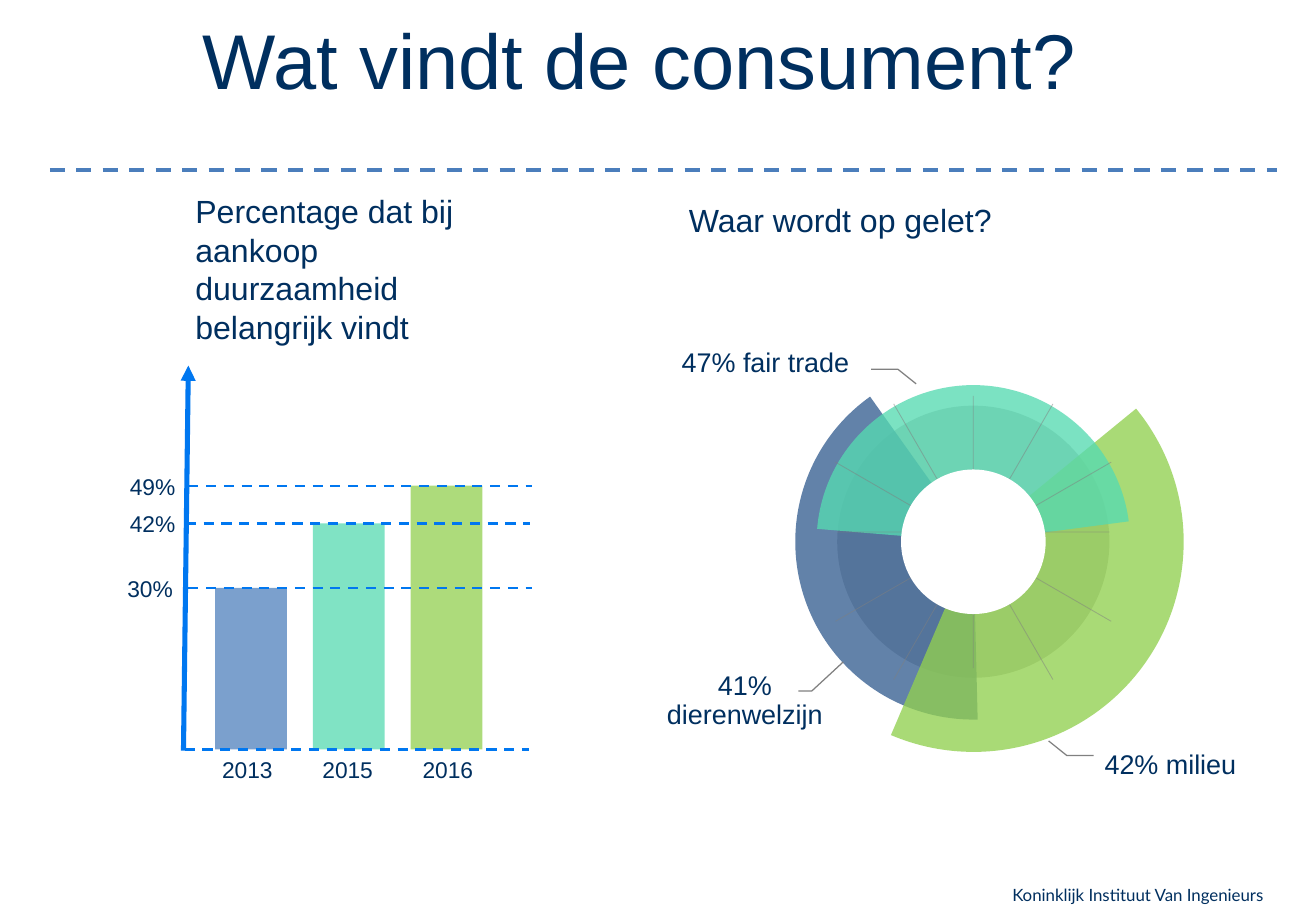
from math import cos, radians, sin

from lxml import etree
from pptx import Presentation
from pptx.dml.color import RGBColor
from pptx.enum.dml import MSO_LINE
from pptx.enum.shapes import MSO_CONNECTOR, MSO_SHAPE
from pptx.enum.text import PP_ALIGN
from pptx.oxml.ns import qn
from pptx.util import Inches, Pt

RECTANGLE, OVAL, PIE = MSO_SHAPE.RECTANGLE, MSO_SHAPE.OVAL, MSO_SHAPE.CHORD.PIE
STRAIGHT = MSO_CONNECTOR.STRAIGHT
DASH = MSO_LINE.DASH
LEFT, CENTER, RIGHT = PP_ALIGN.LEFT, PP_ALIGN.CENTER, PP_ALIGN.RIGHT

NAVY, AXIS_BLUE, GREY, WHITE = "002F5F", "0077F0", "808080", "FFFFFF"
RULE_BLUE = "4B7EBC"
NORMAL_INSETS, FOOTER_INSETS, NO_INSETS = (0.1, 0.05), (0.04, 0.02), (0, 0)

TITLE = "Wat vindt de consument?"
FOOTER = "Koninklijk Instituut Van Ingenieurs"
HEADINGS = [
    ("Percentage dat bij aankoop duurzaamheid belangrijk vindt", 1.51, 1.53, 1.06),
    ("Waar wordt op gelet?", 5.57, 1.6, 0.42),
]

YEARS = [
    ("2013", 30, "4F81BD", 0.95, 1.55),
    ("2015", 42, "56DAB1", 0.97, 1.53),
    ("2016", 49, "92D050", 0.97, 1.55),
]
BASELINE = 6.17
INCHES_PER_PERCENT = 0.0443
BAR_LEFT, BAR_PITCH, BAR_WIDTH = 1.77, 0.805, 0.59
YEAR_LEFT, YEAR_PITCH = 1.73, 0.825
LABEL_WIDTH, LABEL_HEIGHT = 0.78, 0.33
GUIDE_LENGTH = 2.83

RING_X, RING_Y = 8.01, 4.46
SECTORS = [
    (1.465, "376092", 88.58, 234.58, 0),
    (1.73, "92D050", 170.88, 323.31, 149.8),
    (1.29, "56DAB1", 271.44, 79.2, 273.3),
]
SPOKES = [(0, 1.12, 4.38), (90, 1.12, 4.38)] + [
    (angle, 1.31, RING_Y) for angle in (30, 60, 120, 150)
]
THEMES = [
    (["41%", "dierenwelzijn"], (5.48, 5.54, 1.3, 0.48), CENTER,
     [(6.94, 5.45), (6.68, 5.69), (6.57, 5.69)]),
    (["47% fair trade"], (5.46, 2.88, 1.53, 0.24), RIGHT,
     [(7.54, 3.16), (7.39, 3.04), (7.17, 3.04)]),
    (["42% milieu"], (9.09, 6.19, 1.43, 0.24), LEFT,
     [(8.63, 6.1), (8.78, 6.22), (9, 6.22)]),
]

deck = Presentation()
deck.slide_width, deck.slide_height = Inches(10.83), Inches(7.5)
shapes = deck.slides.add_slide(deck.slide_layouts[6]).shapes


def paint(color_format, color, opacity=100):
    color_format.rgb = RGBColor.from_string(color)
    if opacity < 100:
        srgb = color_format._xFill.find(qn("a:srgbClr"))
        etree.SubElement(srgb, qn("a:alpha")).set("val", str(opacity * 1000))


def add_text(lines, box, size, align=LEFT, insets=NORMAL_INSETS, spacing=None, font="Arial"):
    frame = shapes.add_textbox(*map(Inches, box)).text_frame
    frame.word_wrap = True
    frame.margin_left = frame.margin_right = Inches(insets[0])
    frame.margin_top = frame.margin_bottom = Inches(insets[1])
    frame.text = "\n".join(lines)
    for paragraph in frame.paragraphs:
        paragraph.alignment = align
        if spacing:
            paragraph.line_spacing = spacing
        for run in paragraph.runs:
            run.font.size, run.font.name = Pt(size), font
            paint(run.font.color, NAVY)


def add_filled(kind, box, color, opacity=100):
    shape = shapes.add_shape(kind, *map(Inches, box))
    shape.shadow.inherit = False
    shape.fill.solid()
    paint(shape.fill.fore_color, color)
    if opacity < 100:
        srgb = shape._element.spPr.find(qn("a:solidFill")).find(qn("a:srgbClr"))
        etree.SubElement(srgb, qn("a:alpha")).set("val", str(opacity * 1000))
    shape.line.fill.background()
    return shape


def add_disc(kind, radius, color, opacity=100):
    box = (RING_X - radius, RING_Y - radius, 2 * radius, 2 * radius)
    return add_filled(kind, box, color, opacity)


def add_line(start, end, color, width, dash=None, opacity=100, arrow=False):
    connector = shapes.add_connector(STRAIGHT, *map(Inches, (*start, *end)))
    connector.line.width = Pt(width)
    connector.line.fill.solid()
    paint(connector.line.color, color)
    if dash:
        connector.line.dash_style = dash
    properties = connector._element.spPr
    outline = properties.find(qn("a:ln"))
    if opacity < 100:
        srgb = outline.find(qn("a:solidFill")).find(qn("a:srgbClr"))
        etree.SubElement(srgb, qn("a:alpha")).set("val", str(opacity * 1000))
    if arrow:
        etree.SubElement(outline, qn("a:tailEnd")).set("type", "triangle")
    etree.SubElement(properties, qn("a:effectLst"))


def add_leader(points):
    start, *rest = [tuple(map(Inches, point)) for point in points]
    builder = shapes.build_freeform(*start)
    builder.add_line_segments(rest, close=False)
    leader = builder.convert_to_shape()
    leader.shadow.inherit = False
    leader.fill.background()
    leader.line.width = Pt(0.75)
    paint(leader.line.color, GREY)


add_text([FOOTER], (8.29, 7.26, 2.48, 0.24), 10, insets=FOOTER_INSETS, font="Lato")
add_text([TITLE], (0.95, 0.05, 8.62, 1.45), 46, CENTER)

guides = [(1.52, BASELINE)]
for index, (year, percent, color, label_left, guide_left) in enumerate(YEARS):
    height = percent * INCHES_PER_PERCENT
    top = BASELINE - height
    add_filled(RECTANGLE, (BAR_LEFT + index * BAR_PITCH, top, BAR_WIDTH, height), color, 75)
    add_text([year], (YEAR_LEFT + index * YEAR_PITCH, BASELINE, LABEL_WIDTH, LABEL_HEIGHT), 13.5)
    add_text([f"{percent}%"], (label_left, top - 0.16, LABEL_WIDTH, LABEL_HEIGHT), 13.5)
    guides.append((guide_left, top))

add_line((1.51, 6.18), (1.55, 3.01), AXIS_BLUE, 3, arrow=True)
for left, top in guides:
    add_line((left, top), (left + GUIDE_LENGTH, top), AXIS_BLUE, 1.5, DASH)

for heading, left, top, height in HEADINGS:
    add_text([heading], (left, top, 2.88, height), 19)

add_disc(OVAL, 1.12, GREY, 50)
for radius, color, start_angle, end_angle, rotation in SECTORS:
    sector = add_disc(PIE, radius, color, 78)
    sector.adjustments[0] = start_angle * 0.6
    sector.adjustments[1] = end_angle * 0.6
    sector.rotation = rotation
for angle, radius, middle in SPOKES:
    dx, dy = radius * cos(radians(angle)), radius * sin(radians(angle))
    add_line((RING_X - dx, middle - dy), (RING_X + dx, middle + dy), GREY, 0.5, opacity=50)
add_disc(OVAL, 0.595, WHITE)

for lines, box, align, leader_points in THEMES:
    add_text(lines, box, 16, align, NO_INSETS, 0.89)
    add_leader(leader_points)

add_line((0.41, 1.4), (10.51, 1.4), RULE_BLUE, 2.25, DASH)

deck.save("out.pptx")
